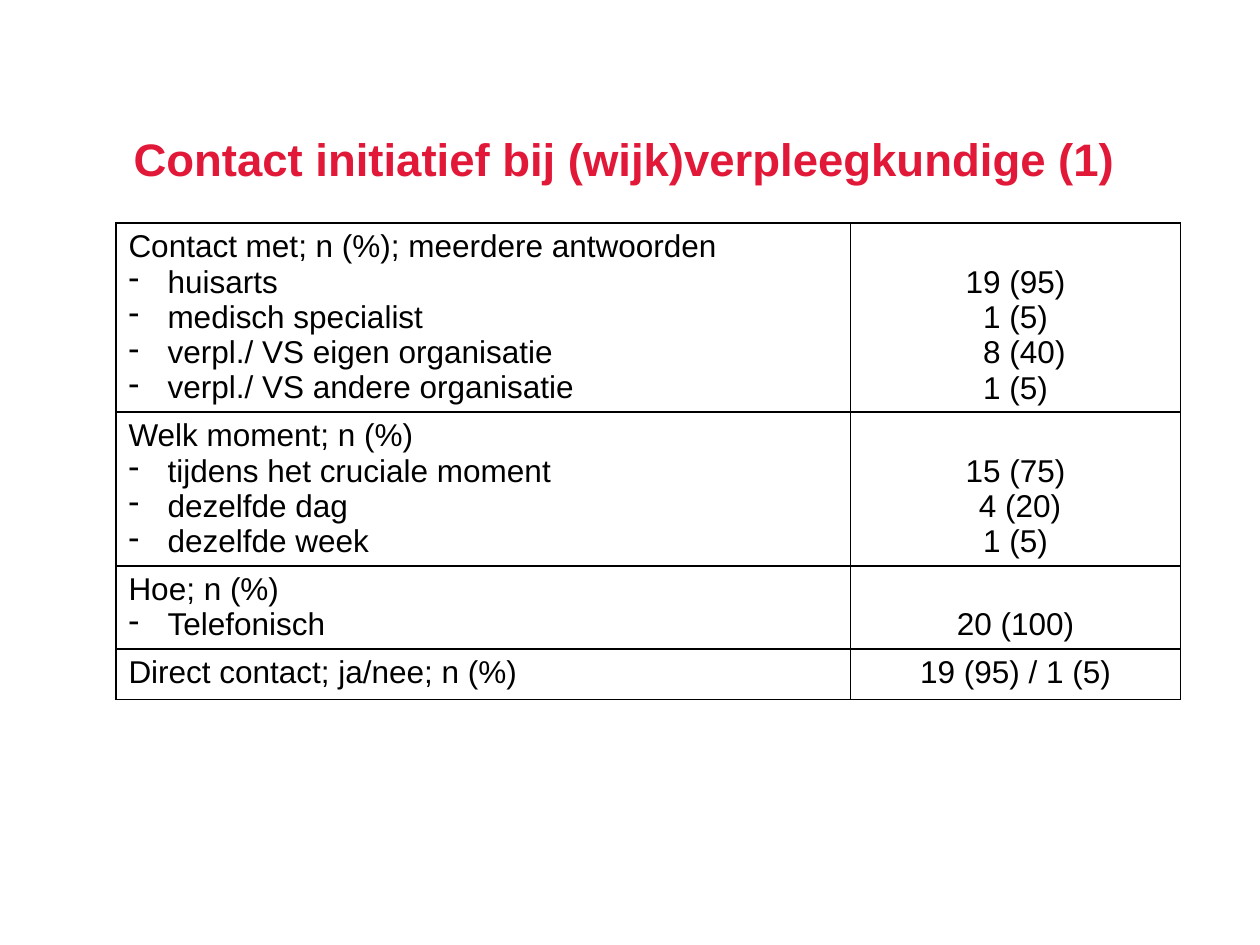
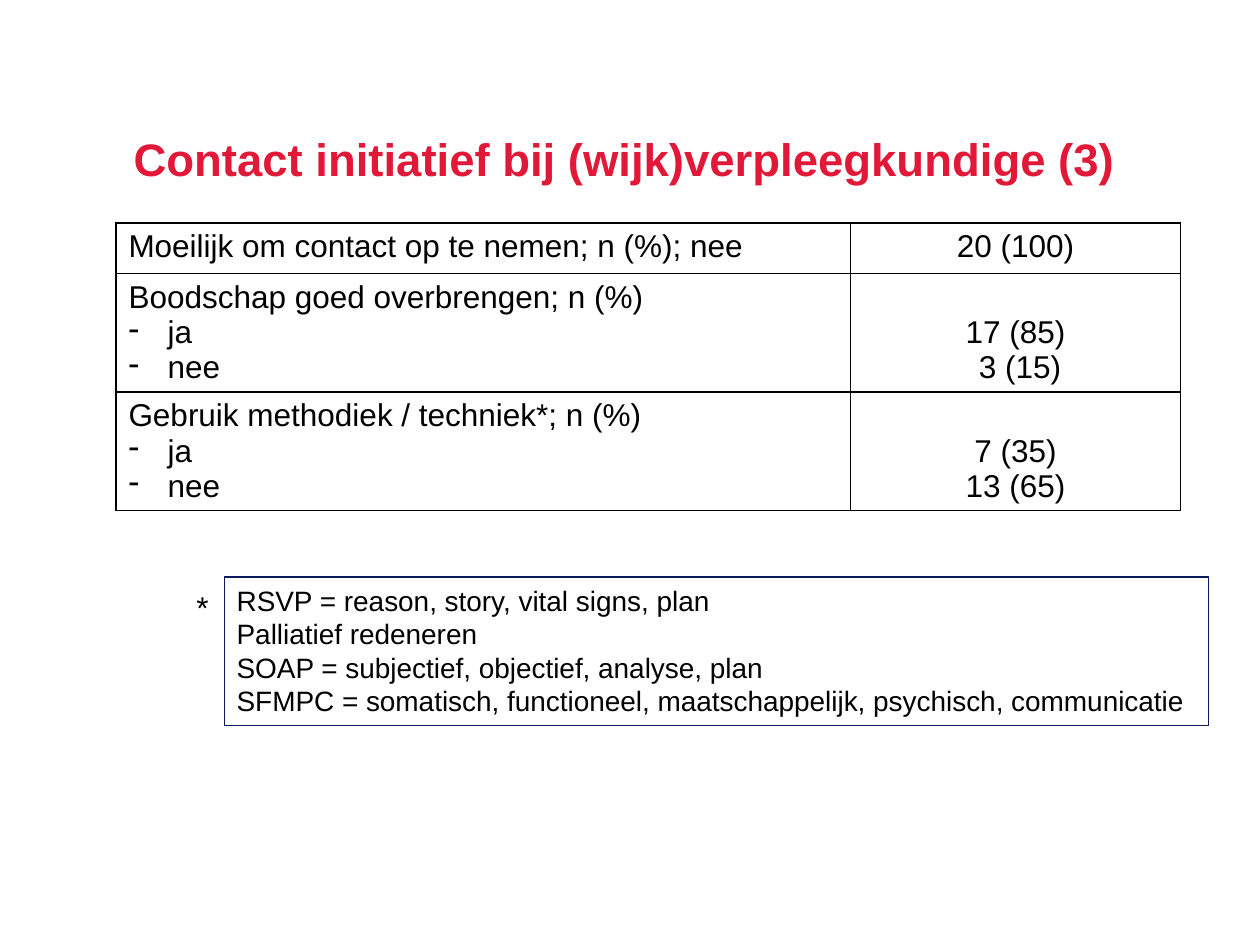
"""Build two slides on contact initiated by the district nurse."""
import lxml.etree
import pptx
import pptx.dml.color
import pptx.enum.text
import pptx.oxml.ns
import pptx.util

Inches, Pt = pptx.util.Inches, pptx.util.Pt
ANCHOR, ALIGN = pptx.enum.text.MSO_ANCHOR, pptx.enum.text.PP_ALIGN
qn = pptx.oxml.ns.qn

COLORS = {"title": "E11837", "text": "000000", "grid": "000000", "box": "0B1A58"}
FONT = "Arial"
TITLE = "Contact initiatief bij (wijk)verpleegkundige ({})"
COLS = (5.83, 2.62)
ROW, LINE, PAD = 0.4, 0.28, 0.1
SPACE = 0.07

# Each row: heading, value beside the heading, items of (label, value, lead spaces).
SLIDES = [
    {"number": 1, "notes": [], "rows": [
        ("Contact met; n (%); meerdere antwoorden", "", [
            ("huisarts", "19 (95)", 0),
            ("medisch specialist", "1 (5)", 0),
            ("verpl./ VS eigen organisatie", "8 (40)", 2),
            ("verpl./ VS andere organisatie", "1 (5)", 0)]),
        ("Welk moment; n (%)", "", [
            ("tijdens het cruciale moment", "15 (75)", 0),
            ("dezelfde dag", "4 (20)", 1),
            ("dezelfde week", "1 (5)", 0)]),
        ("Hoe; n (%)", "", [("Telefonisch", "20 (100)", 0)]),
        ("Direct contact; ja/nee; n (%)", "19 (95) / 1 (5)", [])]},
    {"number": 3, "rows": [
        ("Moeilijk om contact op te nemen; n (%); nee", "20 (100)", []),
        ("Boodschap goed overbrengen; n (%)", "", [
            ("ja", "17 (85)", 0), ("nee", "3 (15)", 1)]),
        ("Gebruik methodiek / techniek*; n (%)", "", [
            ("ja", "7 (35)", 0), ("nee", "13 (65)", 0)])],
     "notes": [
        "RSVP = reason, story, vital signs, plan",
        "Palliatief redeneren",
        "SOAP = subjectief, objectief, analyse, plan",
        "SFMPC = somatisch, functioneel, maatschappelijk, psychisch, communicatie"]},
]


def rgb(name):
    return pptx.dml.color.RGBColor.from_string(COLORS[name])


def write(tf, text, size=18, color="text", bold=False, align=ALIGN.LEFT,
          indent=0, bullet=None, spacing=None):
    p = tf.paragraphs[0]
    if p.runs:
        p = tf.add_paragraph()
    p.alignment = align
    if spacing:
        p.line_spacing = spacing
    pPr = p._p.get_or_add_pPr()
    if indent:
        pPr.set("marL", str(Inches(indent)))
    if bullet:
        pPr.set("indent", str(-Inches(indent)))
        lxml.etree.SubElement(pPr, qn("a:buChar")).set("char", bullet)
    r = p.add_run()
    r.text = text
    r.font.name, r.font.size, r.font.bold = FONT, Pt(size), bold
    r.font.color.rgb = rgb(color)


def add_borders(cell):
    tcPr = cell._tc.get_or_add_tcPr()
    for i, side in enumerate(("lnL", "lnR", "lnT", "lnB")):
        ln = lxml.etree.Element(qn("a:" + side), w=str(Pt(1)))
        fill = lxml.etree.SubElement(ln, qn("a:solidFill"))
        lxml.etree.SubElement(fill, qn("a:srgbClr")).set("val", COLORS["grid"])
        tcPr.insert(i, ln)


def add_title(s, number):
    sp = s.shapes.title
    sp.left, sp.top, sp.width, sp.height = map(Inches, (1.06, 0.98, 8.31, 0.55))
    tf = sp.text_frame
    tf.margin_left = 0
    tf.vertical_anchor = ANCHOR.BOTTOM
    tf.auto_size = pptx.enum.text.MSO_AUTO_SIZE.NONE
    write(tf, TITLE.format(number), size=26, color="title", bold=True, spacing=0.9)


def add_results(s, rows):
    heights = [max(ROW, PAD + LINE * (1 + len(items))) for _, _, items in rows]
    table = s.shapes.add_table(len(rows), len(COLS), Inches(0.92), Inches(1.77),
                               Inches(sum(COLS)), Inches(sum(heights))).table
    table.first_row = table.horz_banding = False
    for col, width in zip(table.columns, COLS):
        col.width = Inches(width)
    for row, height, (heading, total, items) in zip(table.rows, heights, rows):
        row.height = Inches(height)
        label, value = row.cells
        for cell in row.cells:
            cell.fill.background()
            add_borders(cell)
        write(label.text_frame, heading)
        if total:
            write(value.text_frame, total, align=ALIGN.CENTER)
        else:
            value.vertical_anchor = ANCHOR.BOTTOM
        for name, count, lead in items:
            write(label.text_frame, name, indent=0.31, bullet="-")
            write(value.text_frame, count, align=ALIGN.CENTER, indent=lead * SPACE)


def add_box(s, lines, left, top, width, height, size):
    sp = s.shapes.add_textbox(*map(Inches, (left, top, width, height)))
    sp.text_frame.word_wrap = False
    for line in lines:
        write(sp.text_frame, line, size=size)
    return sp


def main():
    prs = pptx.Presentation()
    prs.slide_width, prs.slide_height = Inches(10), Inches(7.5)
    for content in SLIDES:
        s = prs.slides.add_slide(prs.slide_layouts[5])
        add_title(s, content["number"])
        add_results(s, content["rows"])
        if content["notes"]:
            box = add_box(s, content["notes"], 1.78, 4.58, 7.81, 1.18, 16)
            box.line.color.rgb = rgb("box")
            box.line.width = Pt(0.75)
            add_box(s, ["*"], 1.46, 4.62, 0.3, 0.4, 18)
    prs.save("out.pptx")


if __name__ == "__main__":
    main()
